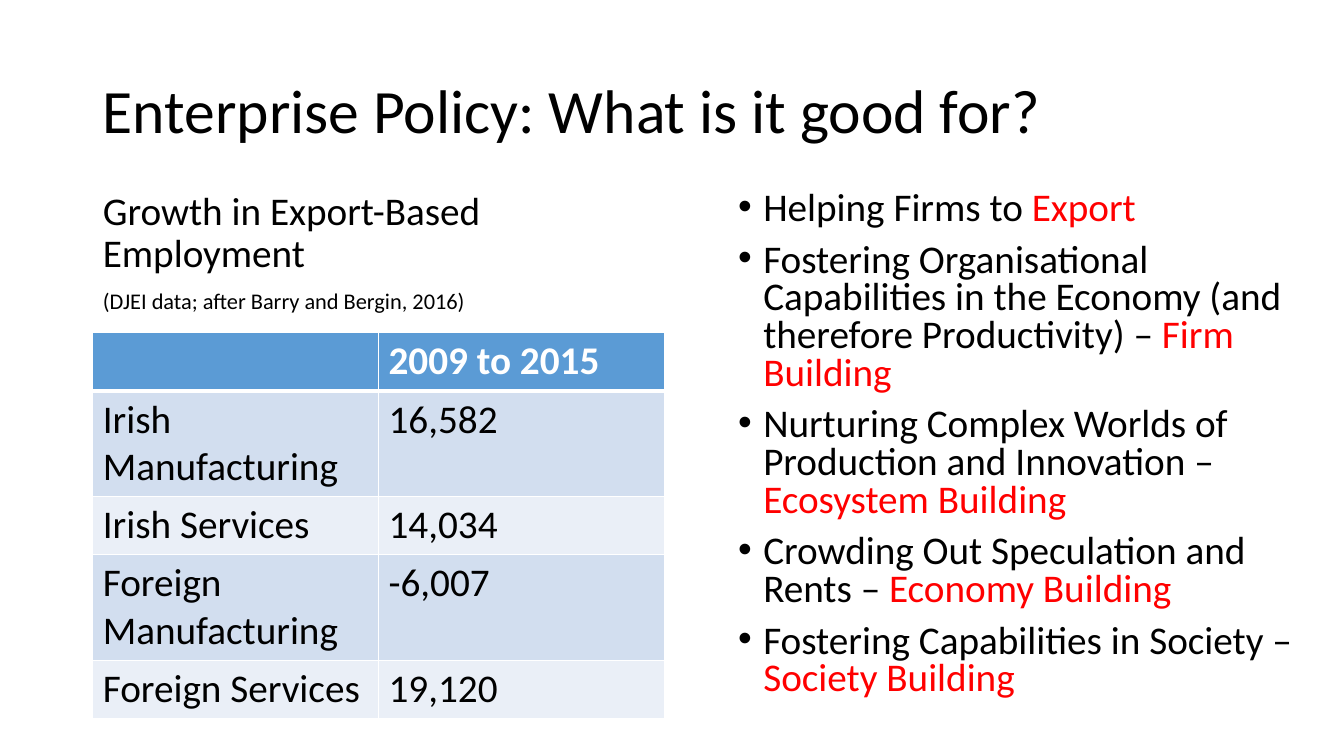
from pptx import Presentation
from pptx.dml.color import RGBColor
from pptx.enum.text import MSO_ANCHOR as Anchor, MSO_AUTO_SIZE as AutoSize, PP_ALIGN as Align
from pptx.oxml import parse_xml
from pptx.oxml.ns import nsdecls
from pptx.util import Inches, Pt

BLACK, WHITE, RED = "000000", "FFFFFF", "FF0000"
HEADER, BAND_DARK, BAND_LIGHT = "5B9BD5", "D2DEEF", "EAEFF7"


def colour(value):
    return RGBColor.from_string(value)


def apply(target, values):
    for name, value in values.items():
        setattr(target, name, value)


class SlideBuilder:
    """Holds the text style and the current slide."""

    font = "Calibri"
    size = 28

    def __init__(self, deck, layout):
        self.page = deck.slides.add_slide(deck.slide_layouts[layout])

    def add_span(self, para, text, size=None, ink=BLACK, bold=False):
        span = para.add_run()
        span.text = text
        apply(span.font, {"name": self.font, "size": Pt(size or self.size), "bold": bold})
        span.font.color.rgb = colour(ink)

    def bullet(self, para, char):
        props = para._p.get_or_add_pPr()
        indent = Inches(0.25) if char else 0
        props.set("marL", str(indent))
        props.set("indent", str(-indent))
        if char:
            props.append(parse_xml(f'<a:buFont {nsdecls("a")} typeface="Arial"/>'))
            props.append(parse_xml(f'<a:buChar {nsdecls("a")} char="{char}"/>'))
        else:
            props.append(parse_xml(f'<a:buNone {nsdecls("a")}/>'))

    def fill_placeholder(self, index, place, paragraphs, spacing=0.9, before=10,
                         char=None, anchor=Anchor.TOP):
        """Each paragraph is a list of (text, size, colour) spans."""
        box = self.page.placeholders[index]
        apply(box, dict(zip(("left", "top", "width", "height"), map(Inches, place))))
        frame = box.text_frame
        apply(frame, {"word_wrap": True, "auto_size": AutoSize.NONE,
                      "vertical_anchor": anchor})
        for number, spans in enumerate(paragraphs):
            para = frame.add_paragraph() if number else frame.paragraphs[0]
            apply(para, {"alignment": Align.LEFT, "line_spacing": spacing,
                         "space_before": Pt(before)})
            self.bullet(para, char)
            for text, size, ink in spans:
                self.add_span(para, text, size, ink)

    def border(self, cell, widths):
        props = cell._tc.get_or_add_tcPr()
        for position, (side, width) in enumerate(widths.items()):
            props.insert(position, parse_xml(
                f'<a:ln{side} {nsdecls("a")} w="{Pt(width)}"><a:solidFill>'
                f'<a:srgbClr val="{WHITE}"/></a:solidFill></a:ln{side}>'))

    def table(self, place, row_height, rows):
        left, top, width = map(Inches, place)
        grid = self.page.shapes.add_table(len(rows), len(rows[0]), left, top, width,
                                          Inches(row_height) * len(rows)).table
        for r, values in enumerate(rows):
            head = r == 0
            fill = HEADER if head else BAND_DARK if r % 2 else BAND_LIGHT
            for c, value in enumerate(values):
                cell = grid.cell(r, c)
                cell.fill.solid()
                cell.fill.fore_color.rgb = colour(fill)
                self.border(cell, {"L": 1, "R": 1, "T": 3 if r == 1 else 1,
                                   "B": 3 if head else 1})
                if value:
                    self.add_span(cell.text_frame.paragraphs[0], value,
                                  ink=WHITE if head else BLACK, bold=head)


def main():
    deck = Presentation()
    apply(deck, {"slide_width": Inches(13.33), "slide_height": Inches(7.5)})
    slide = SlideBuilder(deck, layout=3)

    # Title
    slide.fill_placeholder(0, (0.92, 0.4, 11.5, 1.45),
                           [[("Enterprise Policy: What is it good for?", 44, BLACK)]],
                           before=0, anchor=Anchor.MIDDLE)

    # Table heading and its source
    slide.fill_placeholder(1, (0.92, 1.85, 5.67, 4.76), [
        [("Growth in Export-Based Employment", 28, BLACK)],
        [("(DJEI data; after Barry and Bergin, 2016)", 16, BLACK)],
    ])

    # Employment table
    slide.table((0.92, 3.3, 5.67), 0.41, [
        ("", "2009 to 2015"),
        ("Irish Manufacturing", "16,582"),
        ("Irish Services", "14,034"),
        ("Foreign Manufacturing", "-6,007"),
        ("Foreign Services", "19,120"),
    ])

    # Policy aims, each ending in a red keyword
    aims = [
        ("Helping Firms to ", "Export"),
        ("Fostering Organisational Capabilities in the Economy "
         "(and therefore Productivity) – ", "Firm Building"),
        ("Nurturing Complex Worlds of Production and Innovation – ", "Ecosystem Building"),
        ("Crowding Out Speculation and Rents – ", "Economy Building"),
        ("Fostering Capabilities in Society – ", "Society Building"),
    ]
    slide.fill_placeholder(2, (7.22, 1.85, 5.98, 5.46),
                           [[(aim, 28, BLACK), (keyword, 28, RED)] for aim, keyword in aims],
                           spacing=0.8, char="•")

    deck.save("out.pptx")


if __name__ == "__main__":
    main()
